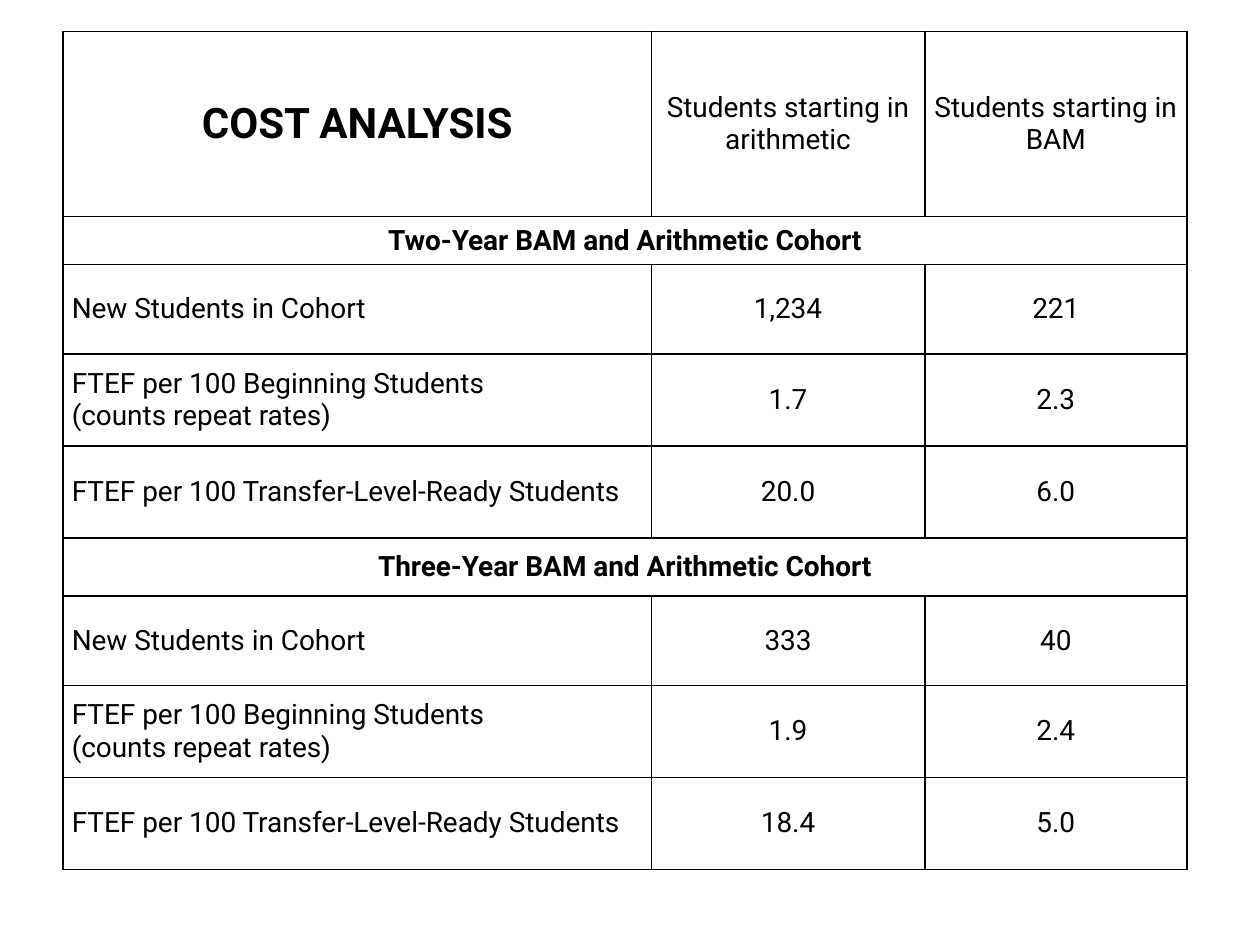
from lxml.etree import SubElement
from pptx import Presentation
from pptx.dml.color import RGBColor
from pptx.enum.text import MSO_ANCHOR, PP_ALIGN
from pptx.oxml.ns import qn
from pptx.util import Inches, Pt

COLORS = {"ink": "000000", "paper": "FFFFFF"}
FONT = "Roboto"
COLUMN_WIDTHS = [4.67, 2.17, 2.08]
HEADER_HEIGHT = 1.47
METRIC_HEIGHTS = [0.71, 0.73, 0.73]
HEADERS = ["COST ANALYSIS", "Students starting in arithmetic", "Students starting in BAM"]
METRICS = [
    "New Students in Cohort",
    "FTEF per 100 Beginning Students\n(counts repeat rates)",
    "FTEF per 100 Transfer-Level-Ready Students",
]
COHORTS = [
    ("Two-Year BAM and Arithmetic Cohort", 0.38,
     [("1,234", "221"), ("1.7", "2.3"), ("20.0", "6.0")]),
    ("Three-Year BAM and Arithmetic Cohort", 0.46,
     [("333", "40"), ("1.9", "2.4"), ("18.4", "5.0")]),
]


def add_borders(cell):
    properties = cell._tc.get_or_add_tcPr()
    for side in ("lnL", "lnR", "lnT", "lnB"):
        line = SubElement(properties, qn(f"a:{side}"), w=str(Pt(1)))
        fill = SubElement(line, qn("a:solidFill"))
        SubElement(fill, qn("a:srgbClr"), val=COLORS["ink"])


def style_cell(cell):
    add_borders(cell)
    cell.fill.solid()
    cell.fill.fore_color.rgb = RGBColor.from_string(COLORS["paper"])
    cell.vertical_anchor = MSO_ANCHOR.MIDDLE
    cell.margin_left = cell.margin_right = Inches(0.07)
    cell.margin_top = cell.margin_bottom = 0


def write_cell(cell, text, size=16, bold=False, align=PP_ALIGN.CENTER):
    cell.text = text
    for paragraph in cell.text_frame.paragraphs:
        paragraph.alignment = align
        paragraph.font.name = FONT
        paragraph.font.size = Pt(size)
        paragraph.font.bold = bold
        paragraph.font.color.rgb = RGBColor.from_string(COLORS["ink"])


def add_cost_table(slide):
    heights = [HEADER_HEIGHT]
    for _, band_height, _ in COHORTS:
        heights += [band_height, *METRIC_HEIGHTS]
    frame = slide.shapes.add_table(
        len(heights), len(COLUMN_WIDTHS), Inches(0.5), Inches(0.25),
        Inches(sum(COLUMN_WIDTHS)), Inches(sum(heights)))
    table = frame.table
    table.first_row = table.horz_banding = False
    for column, width in zip(table.columns, COLUMN_WIDTHS):
        column.width = Inches(width)
    for row, height in zip(table.rows, heights):
        row.height = Inches(height)
    for cell in table.iter_cells():
        style_cell(cell)
    return table


def write_headers(table):
    for column, text in enumerate(HEADERS):
        is_title = column == 0
        write_cell(table.cell(0, column), text, size=24 if is_title else 16, bold=is_title)


def write_cohort(table, top, name, values):
    band = table.cell(top, 0)
    band.merge(table.cell(top, len(COLUMN_WIDTHS) - 1))
    write_cell(band, name, bold=True)
    for row, (metric, results) in enumerate(zip(METRICS, values), start=top + 1):
        write_cell(table.cell(row, 0), metric, align=PP_ALIGN.LEFT)
        for column, result in enumerate(results, start=1):
            write_cell(table.cell(row, column), result)


def main():
    deck = Presentation()
    deck.slide_width, deck.slide_height = Inches(10), Inches(7.5)
    slide = deck.slides.add_slide(deck.slide_layouts[6])
    table = add_cost_table(slide)
    write_headers(table)
    for index, (name, _, values) in enumerate(COHORTS):
        write_cohort(table, 1 + index * (len(METRICS) + 1), name, values)
    deck.save("out.pptx")


if __name__ == "__main__":
    main()
